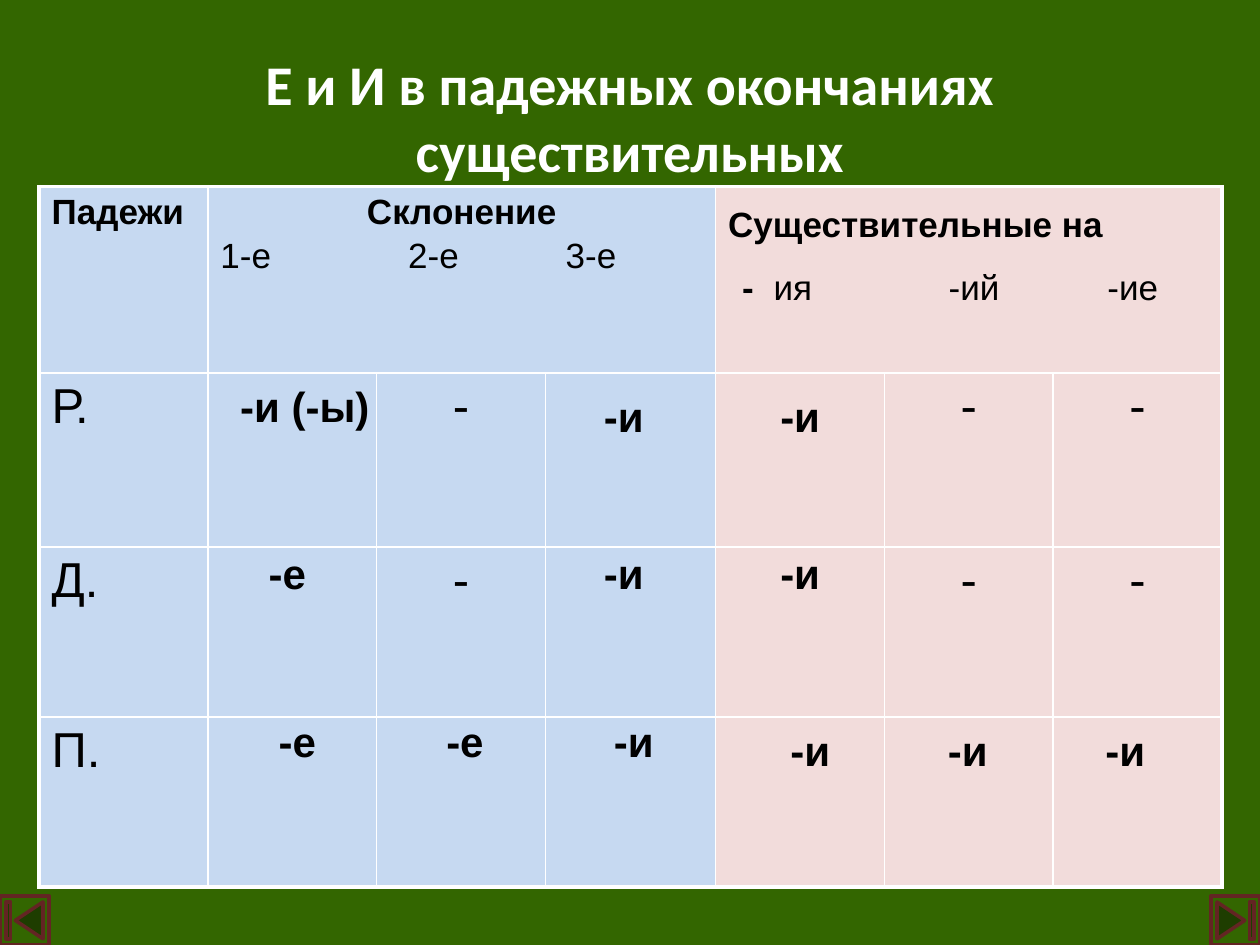
from lxml.etree import SubElement
from pptx import Presentation
from pptx.dml.color import RGBColor
from pptx.enum.shapes import MSO_SHAPE
from pptx.enum.text import MSO_ANCHOR, MSO_AUTO_SIZE, PP_ALIGN
from pptx.oxml import parse_xml
from pptx.oxml.ns import nsdecls, qn
from pptx.util import Inches, Pt

COLORS = {
    "board": "336600", "button_line": "632523", "white": "FFFFFF",
    "black": "000000", "declension": "C6D9F1", "nouns": "F2DCDB",
}
COL_WIDTHS = [1.34, 1.34, 1.34, 1.35, 1.34, 1.34, 1.34]
ROW_HEIGHTS = [1.48, 1.38, 1.35, 1.35]
CASES = ["Р.", "Д.", "П."]
DASH_CELLS = [(row, col) for row in (1, 2) for col in (2, 5, 6)]
ENDINGS = [
    ("-и (-ы)", 1.8, 2.97, 1.24),
    ("-е", 2.03, 4.3, 0.5),
    ("-е", 2.11, 5.63, 0.5),
    ("-е", 3.44, 5.63, 0.5),
    ("-и", 4.69, 3.05, 0.52),
    ("-и", 4.69, 4.3, 0.52),
    ("-и", 4.77, 5.63, 0.52),
    ("-и", 6.09, 3.05, 0.52),
    ("-и", 6.09, 4.3, 0.52),
    ("-и", 6.17, 5.7, 0.52),
    ("-и", 7.42, 5.7, 0.52),
    ("-и", 8.67, 5.7, 0.52),
]


def rgb(name):
    return RGBColor.from_string(COLORS[name])


class SlideBuilder:
    def __init__(self, prs):
        self.s = prs.slides.add_slide(prs.slide_layouts[6])
        self.s.background.fill.solid()
        self.s.background.fill.fore_color.rgb = rgb("board")

    def add_runs(self, p, runs, size, align=PP_ALIGN.LEFT, font="Arial",
                 color="black", before=0, tabs=()):
        """Fill a paragraph with (text, bold) runs; tabs are in inches."""
        if tabs:
            tab_list = SubElement(p._p.get_or_add_pPr(), qn("a:tabLst"))
            for pos in tabs:
                SubElement(tab_list, qn("a:tab"), pos=str(Inches(pos)), algn="l")
        p.alignment = align
        if before:
            p.space_before = Pt(before)
        for text, bold in runs:
            r = p.add_run()
            r.text = text
            r.font.name, r.font.size, r.font.bold = font, Pt(size), bold
            r.font.color.rgb = rgb(color)

    def text(self, text, x, y, w, h, size, wrap=False, **style):
        sp = self.s.shapes.add_textbox(Inches(x), Inches(y), Inches(w), Inches(h))
        tf = sp.text_frame
        tf.word_wrap = wrap
        if wrap:
            tf.vertical_anchor = MSO_ANCHOR.MIDDLE
        else:
            tf.auto_size = MSO_AUTO_SIZE.SHAPE_TO_FIT_TEXT
        self.add_runs(tf.paragraphs[0], [(text, True)], size, PP_ALIGN.CENTER, **style)

    def button(self, x, y, size, rotation=0):
        sp = self.s.shapes.add_shape(
            MSO_SHAPE.ACTION_BUTTON_BEGINNING,
            Inches(x), Inches(y), Inches(size), Inches(size))
        sp.rotation = rotation
        sp.shadow.inherit = False
        sp.fill.solid()
        sp.fill.fore_color.rgb = rgb("board")
        sp.line.color.rgb = rgb("button_line")
        sp.line.width = Pt(2)

    def table(self, x, y, widths, heights, merges):
        tbl = self.s.shapes.add_table(
            len(heights), len(widths), Inches(x), Inches(y),
            Inches(sum(widths)), Inches(sum(heights))).table
        tbl.first_row = tbl.horz_banding = False
        for col, w in zip(tbl.columns, widths):
            col.width = Inches(w)
        for row, h in zip(tbl.rows, heights):
            row.height = Inches(h)
        for start, end in merges:
            tbl.cell(*start).merge(tbl.cell(*end))
        for r in range(len(heights)):
            for c in range(len(widths)):
                cell = tbl.cell(r, c)
                if cell.is_spanned:
                    continue
                cell.fill.solid()
                cell.fill.fore_color.rgb = rgb("declension" if c < 4 else "nouns")
                self.borders(cell, {
                    "lnL": c == 0,
                    "lnR": c + cell.span_width == len(widths),
                    "lnT": r == 0,
                    "lnB": r == len(heights) - 1,
                })
        return tbl

    def borders(self, cell, sides):
        """Draw white borders, thicker on the sides marked as outer."""
        tc_pr = cell._tc.get_or_add_tcPr()
        for i, (tag, outer) in enumerate(sides.items()):
            width = Pt(2.25 if outer else 1)
            tc_pr.insert(i, parse_xml(
                f'<a:{tag} {nsdecls("a")} w="{width}"><a:solidFill>'
                f'<a:srgbClr val="{COLORS["white"]}"/></a:solidFill></a:{tag}>'))


def main():
    prs = Presentation()
    prs.slide_width, prs.slide_height = Inches(10), Inches(7.5)
    b = SlideBuilder(prs)

    b.button(0, 7.11, 0.39)
    b.button(9.61, 7.11, 0.39, rotation=180)

    tbl = b.table(0.31, 1.48, COL_WIDTHS, ROW_HEIGHTS,
                  [((0, 1), (0, 3)), ((0, 4), (0, 6))])
    b.add_runs(tbl.cell(0, 0).text_frame.paragraphs[0], [("Падежи", True)], 20)

    tf = tbl.cell(0, 1).text_frame
    b.add_runs(tf.paragraphs[0], [("Склонение", True)], 20, PP_ALIGN.CENTER)
    b.add_runs(tf.add_paragraph(), [("1-е\t2-е\t3-е", False)], 20,
               before=3, tabs=(1.49, 2.74))

    nouns = tbl.cell(0, 4)
    nouns.margin_top = Inches(0.15)
    tf = nouns.text_frame
    b.add_runs(tf.paragraphs[0], [("Существительные на", True)], 20)
    b.add_runs(tf.add_paragraph(), [("\t-", True), ("\tия\t-ий\t-ие", False)], 20,
               before=14, tabs=(0.11, 0.36, 1.75, 3.01))

    for row, case in enumerate(CASES, 1):
        b.add_runs(tbl.cell(row, 0).text_frame.paragraphs[0], [(case, False)], 28)
    for row, col in DASH_CELLS:
        b.add_runs(tbl.cell(row, col).text_frame.paragraphs[0], [("-", False)], 28,
                   PP_ALIGN.CENTER)

    b.text("Е и И в падежных окончаниях существительных", 0.5, 0.3, 9, 1.25, 32,
           wrap=True, font="Calibri", color="white")
    for ending, x, y, w in ENDINGS:
        b.text(ending, x, y, w, 0.5, 24)

    prs.save("out.pptx")


if __name__ == "__main__":
    main()
